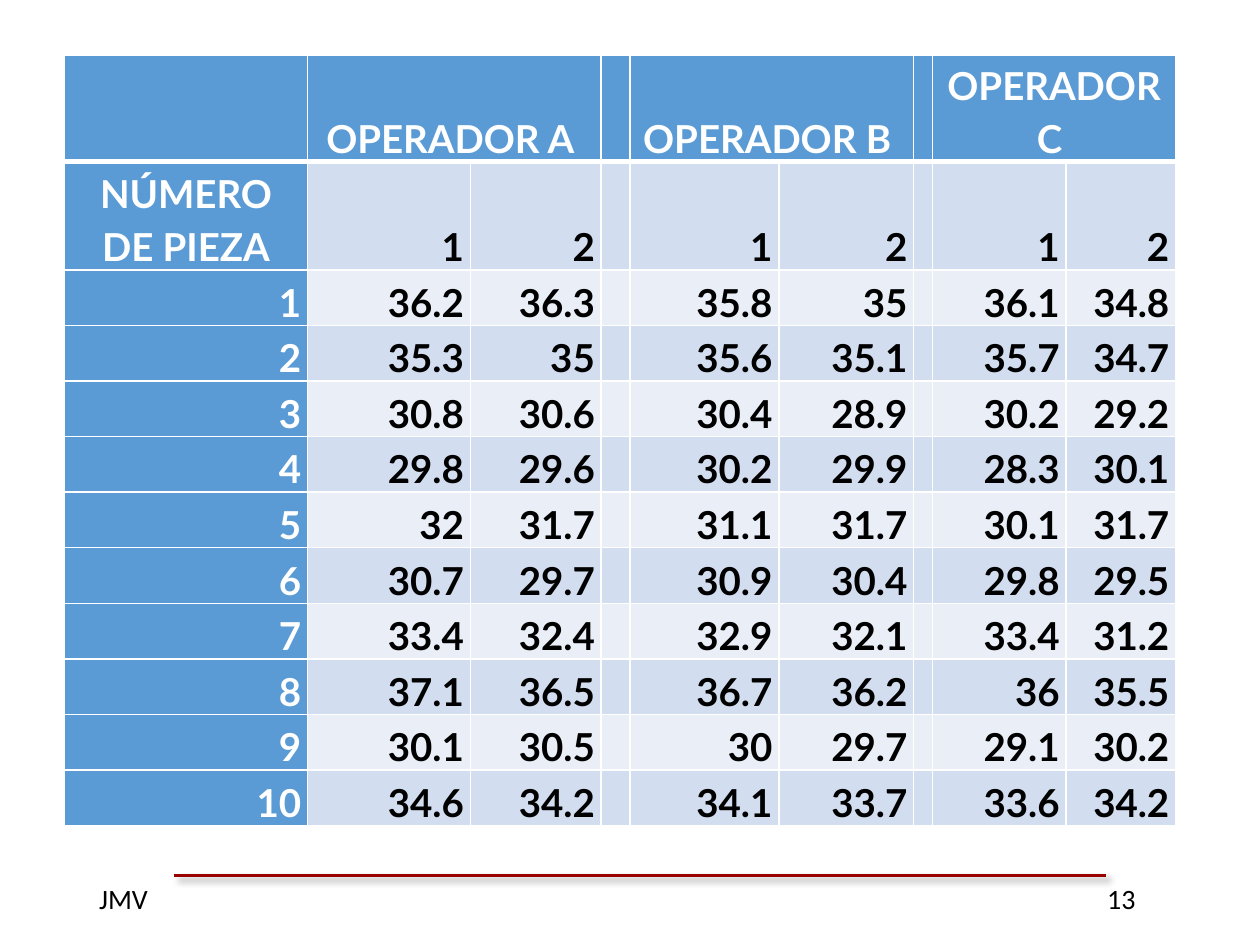
import lxml.etree
import pptx
import pptx.dml.color
import pptx.enum.shapes
import pptx.enum.text
import pptx.oxml
import pptx.oxml.ns
import pptx.util

Cm = pptx.util.Cm
Pt = pptx.util.Pt
Align = pptx.enum.text.PP_ALIGN
qn = pptx.oxml.ns.qn

COLORS = {
    "header": "5B9BD5",
    "band_dark": "D2DEEF",
    "band_light": "EAEFF7",
    "white": "FFFFFF",
    "black": "000000",
    "rule": "990000",
}

# Two trials per operator, for operators A, B and C
MEASUREMENTS = [
    ("36.2", "36.3", "35.8", "35", "36.1", "34.8"),
    ("35.3", "35", "35.6", "35.1", "35.7", "34.7"),
    ("30.8", "30.6", "30.4", "28.9", "30.2", "29.2"),
    ("29.8", "29.6", "30.2", "29.9", "28.3", "30.1"),
    ("32", "31.7", "31.1", "31.7", "30.1", "31.7"),
    ("30.7", "29.7", "30.9", "30.4", "29.8", "29.5"),
    ("33.4", "32.4", "32.9", "32.1", "33.4", "31.2"),
    ("37.1", "36.5", "36.7", "36.2", "36", "35.5"),
    ("30.1", "30.5", "30", "29.7", "29.1", "30.2"),
    ("34.6", "34.2", "34.1", "33.7", "33.6", "34.2"),
]
COLUMN_WIDTHS = [4.9, 3.28, 2.64, 0.58, 3, 2.72, 0.38, 2.69, 2.21]
ROW_HEIGHTS = [2.13, 2.18] + [1.12] * len(MEASUREMENTS)
OPERATOR_COLUMNS = {1: "OPERADOR A ", 4: "OPERADOR B ", 7: "OPERADOR C "}


def rgb(name):
    return pptx.dml.color.RGBColor.from_string(COLORS[name])


def add_border(cell, side, points):
    line = lxml.etree.SubElement(
        cell._tc.get_or_add_tcPr(), qn(f"a:ln{side}"), w=str(Pt(points)))
    fill = lxml.etree.SubElement(line, qn("a:solidFill"))
    lxml.etree.SubElement(fill, qn("a:srgbClr"), val=COLORS["white"])


deck = pptx.Presentation()
deck.slide_width, deck.slide_height = Cm(25.4), Cm(19.05)
page = deck.slides.add_slide(deck.slide_layouts[6])

# Footer text, with the page number on a tab stop
box = page.shapes.add_textbox(Cm(1.75), Cm(17.65), Cm(21.9), Cm(0.94))
box.text_frame.word_wrap = True
para = box.text_frame.paragraphs[0]
tabs = lxml.etree.SubElement(para._p.get_or_add_pPr(), qn("a:tabLst"))
lxml.etree.SubElement(tabs, qn("a:tab"), pos=str(Cm(20.32)), algn="l")
span = para.add_run()
span.text = "JMV\t13"
span.font.name, span.font.size = "Calibri", Pt(16)
span.font.color.rgb = rgb("black")

# Footer rule with a soft shadow
rule = page.shapes.add_connector(
    pptx.enum.shapes.MSO_CONNECTOR.STRAIGHT, Cm(3.5), Cm(17.65), Cm(22.3), Cm(17.65))
rule.line.color.rgb = rgb("rule")
rule.line.width = Pt(1.5)
effects = lxml.etree.SubElement(rule._element.spPr, qn("a:effectLst"))
shadow = lxml.etree.SubElement(
    effects, qn("a:outerShdw"), blurRad=str(Pt(4)), dist=str(Pt(3)), dir="2700000")
shade = lxml.etree.SubElement(shadow, qn("a:srgbClr"), val=COLORS["black"])
lxml.etree.SubElement(shade, qn("a:alpha"), val="40000")

# Table contents: columns 3 and 6 are empty separators
rows = [[OPERATOR_COLUMNS.get(column, "") for column in range(len(COLUMN_WIDTHS))]]
labels = ["NÚMERO DE PIEZA"] + [str(n + 1) for n in range(len(MEASUREMENTS))]
for label, values in zip(labels, [("1", "2") * 3] + MEASUREMENTS):
    rows.append([label, *values[:2], "", *values[2:4], "", *values[4:]])

# Table grid
table = page.shapes.add_table(
    len(rows), len(COLUMN_WIDTHS), Cm(1.3), Cm(1.12),
    Cm(sum(COLUMN_WIDTHS)), Cm(sum(ROW_HEIGHTS))).table
for column, width in zip(table.columns, COLUMN_WIDTHS):
    column.width = Cm(width)
for row, height in zip(table.rows, ROW_HEIGHTS):
    row.height = Cm(height)
for column in OPERATOR_COLUMNS:
    table.cell(0, column).merge(table.cell(0, column + 1))

# Table cells
for r, texts in enumerate(rows):
    for c, text in enumerate(texts):
        cell = table.cell(r, c)
        heading = r == 0 or c == 0
        cell.margin_left = cell.margin_right = Cm(0.13)
        cell.margin_top = cell.margin_bottom = 0
        cell.vertical_anchor = pptx.enum.text.MSO_ANCHOR.BOTTOM
        add_border(cell, "L", 1)
        add_border(cell, "R", 1)
        add_border(cell, "T", 3 if r == 1 else 1)
        add_border(cell, "B", 3 if r == 0 else 1)
        band = "band_dark" if r % 2 else "band_light"
        cell.fill.solid()
        cell.fill.fore_color.rgb = rgb("header" if heading else band)
        if not text:
            continue
        para = cell.text_frame.paragraphs[0]
        para.alignment = Align.CENTER if heading and r < 2 else Align.RIGHT
        para.line_spacing = 1.15
        span = para.add_run()
        span.text = text
        span.font.name, span.font.size, span.font.bold = "Lato", Pt(22), True
        span.font.color.rgb = rgb("white" if heading else "black")

deck.save("out.pptx")
